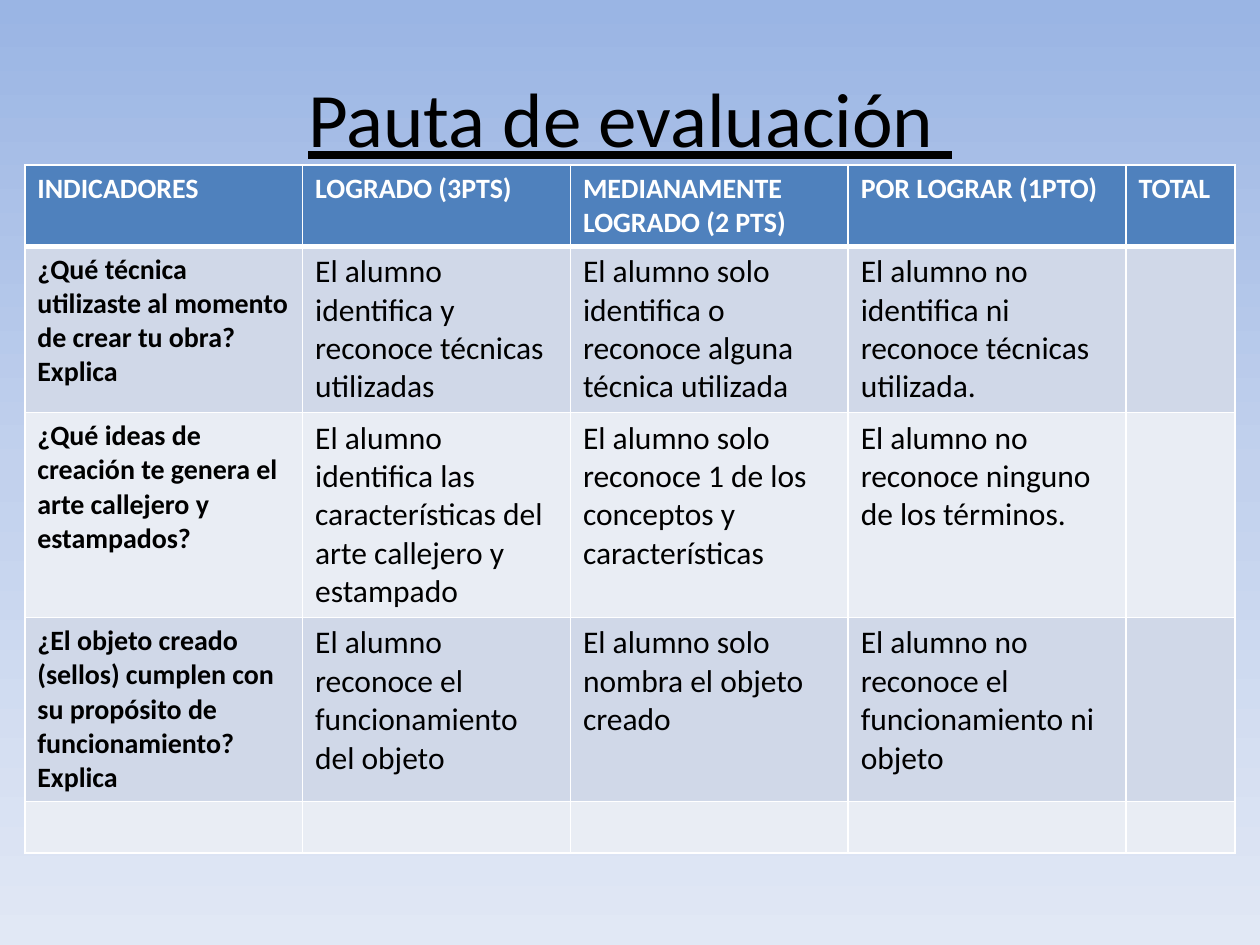
from copy import deepcopy
from pptx import Presentation
from pptx.dml.color import RGBColor
from pptx.enum.text import MSO_ANCHOR, PP_ALIGN
from pptx.oxml import parse_xml
from pptx.oxml.ns import nsdecls, qn
from pptx.util import Cm, Pt


def rgb(code):
    return RGBColor.from_string(code)


def write(para, text, size, color, bold=False):
    """Add one formatted run and return it."""
    run = para.add_run()
    run.text = text
    run.font.name = "Calibri"
    run.font.size = Pt(size)
    run.font.bold = bold
    run.font.color.rgb = rgb(color)
    return run


deck = Presentation()
deck.slide_width, deck.slide_height = Cm(25.4), Cm(19.05)
slide = deck.slides.add_slide(deck.slide_layouts[5])

# Background gradient, top to bottom
fill = slide.background.fill
fill.gradient()
fill.gradient_angle = 270
stops = next(slide.element.iter(qn("a:gsLst")))
stops.append(deepcopy(stops[0]))
shades = [(0, "9AB5E4"), (0.5, "C2D1ED"), (1, "E1E8F5")]
for stop, (place, shade) in zip(fill.gradient_stops, shades):
    stop.position = place
    stop.color.rgb = rgb(shade)

# Title
title = slide.shapes.title
title.left, title.top = Cm(1.27), Cm(0.76)
title.width, title.height = Cm(22.86), Cm(3.18)
title.text_frame.vertical_anchor = MSO_ANCHOR.MIDDLE
para = title.text_frame.paragraphs[0]
para.alignment = PP_ALIGN.CENTER
write(para, "Pauta de evaluación ", 44, "000000").font.underline = True

# Rubric table
rows = [
    ["INDICADORES", "LOGRADO (3PTS)", "MEDIANAMENTE LOGRADO (2 PTS)",
     "POR LOGRAR (1PTO)", "TOTAL"],
    ["¿Qué técnica utilizaste al momento de crear tu obra? Explica",
     "El alumno identifica y reconoce técnicas utilizadas",
     "El alumno solo identifica o reconoce alguna técnica utilizada",
     "El alumno no identifica ni reconoce técnicas utilizada.", ""],
    ["¿Qué ideas de creación te genera el arte callejero y estampados?",
     "El alumno identifica las características del arte callejero y estampado",
     "El alumno solo reconoce 1 de los conceptos y características",
     "El alumno no reconoce ninguno de los términos.", ""],
    ["¿El objeto creado (sellos) cumplen con su propósito de funcionamiento? Explica",
     "El alumno reconoce el funcionamiento del objeto",
     "El alumno solo nombra el objeto creado",
     "El alumno no reconoce el funcionamiento ni objeto", ""],
    [""] * 5,
]
widths = [5.6, 5.4, 5.6, 5.6, 2.2]
heights = [1.63, 3.35, 4.13, 3.7, 1.04]
table = slide.shapes.add_table(
    len(rows), len(widths), Cm(0.5), Cm(3.33), Cm(sum(widths)), Cm(sum(heights))
).table
for col, width in zip(table.columns, widths):
    col.width = Cm(width)
for row, height in zip(table.rows, heights):
    row.height = Cm(height)

for r, texts in enumerate(rows):
    head = r == 0
    shade = "4F81BD" if head else ("E9EDF4", "D0D8E8")[r % 2]
    for c, text in enumerate(texts):
        cell = table.cell(r, c)
        props = cell._tc.get_or_add_tcPr()
        for side in "LRTB":
            thick = (r, side) in [(0, "B"), (1, "T")]
            props.append(parse_xml(
                f'<a:ln{side} {nsdecls("a")} w="{Pt(3 if thick else 1)}"><a:solidFill>'
                f'<a:srgbClr val="FFFFFF"/></a:solidFill></a:ln{side}>'))
        cell.fill.solid()
        cell.fill.fore_color.rgb = rgb(shade)
        if text:
            bold = head or c == 0
            write(cell.text_frame.paragraphs[0], text, 16 if bold else 18,
                  "FFFFFF" if head else "000000", bold)

deck.save("out.pptx")
